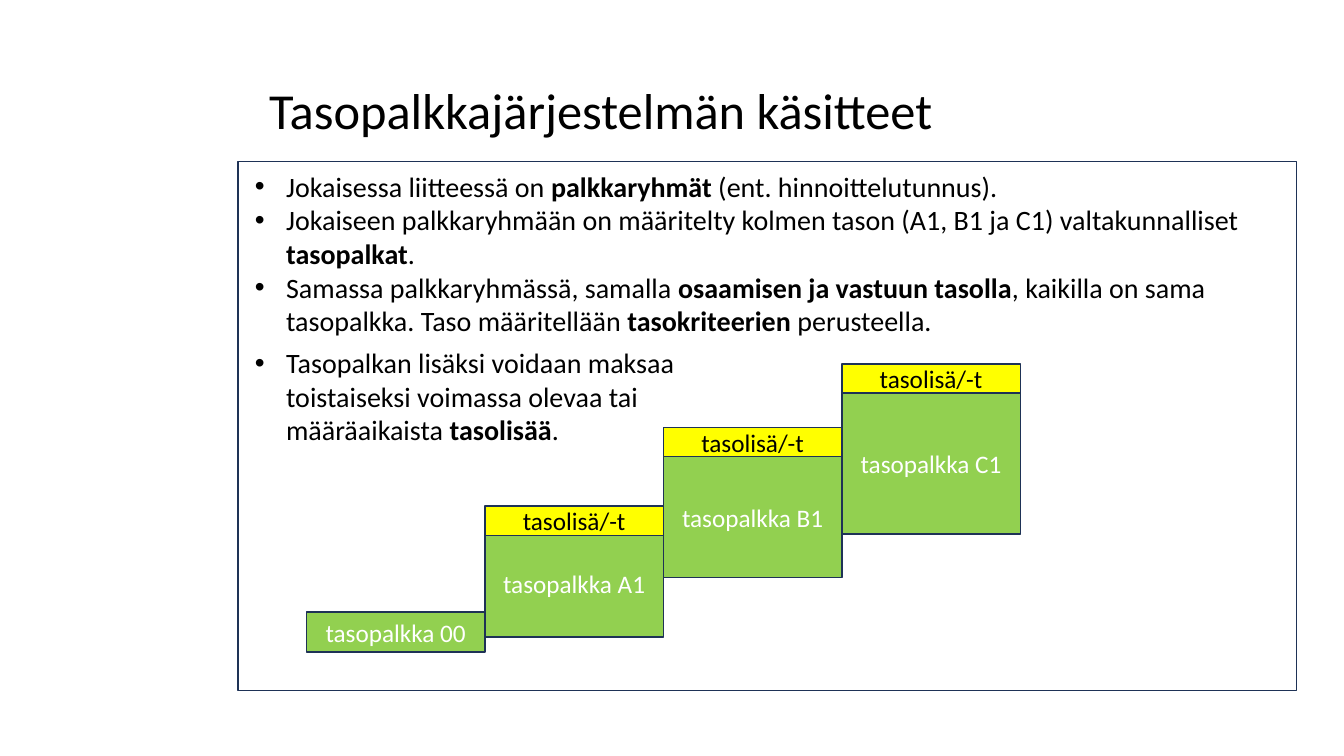
from lxml import etree
from pptx import Presentation
from pptx.dml.color import RGBColor
from pptx.enum.shapes import MSO_SHAPE
from pptx.enum.text import MSO_ANCHOR, PP_ALIGN
from pptx.oxml.ns import qn
from pptx.util import Inches, Pt

RECTANGLE = MSO_SHAPE.RECTANGLE
MIDDLE = MSO_ANCHOR.MIDDLE
CENTER = PP_ALIGN.CENTER

BLACK = RGBColor(0x00, 0x00, 0x00)
WHITE = RGBColor(0xFF, 0xFF, 0xFF)
GREEN = RGBColor(0x92, 0xD0, 0x50)
YELLOW = RGBColor(0xFF, 0xFF, 0x00)
NAVY = RGBColor(0x1E, 0x32, 0x56)
FONT = "Calibri"

deck = Presentation()
deck.slide_width = Inches(13.33)
deck.slide_height = Inches(7.5)
page = deck.slides.add_slide(deck.slide_layouts[6])


def add_block(left, top, width, height, fill=None, text="", color=WHITE):
    block = page.shapes.add_shape(
        RECTANGLE, Inches(left), Inches(top), Inches(width), Inches(height))
    block.shadow.inherit = False
    if fill is None:
        block.fill.background()
    else:
        block.fill.solid()
        block.fill.fore_color.rgb = fill
    block.line.color.rgb = NAVY
    block.line.width = Pt(1)
    if text:
        frame = block.text_frame
        frame.text = text
        frame.word_wrap = True
        frame.vertical_anchor = MIDDLE
        para = frame.paragraphs[0]
        para.alignment = CENTER
        font = para.runs[0].font
        font.name, font.size = FONT, Pt(18)
        font.color.rgb = color


def add_bullets(left, top, width, height, bullets):
    """Each bullet is a list of text pieces; every second piece is bold."""
    box = page.shapes.add_textbox(
        Inches(left), Inches(top), Inches(width), Inches(height))
    frame = box.text_frame
    frame.word_wrap = True
    for index, pieces in enumerate(bullets):
        para = frame.add_paragraph() if index else frame.paragraphs[0]
        properties = para._p.get_or_add_pPr()
        properties.set("marL", str(Inches(0.31)))
        properties.set("indent", str(Inches(-0.31)))
        etree.SubElement(properties, qn("a:buFont")).set("typeface", "Arial")
        etree.SubElement(properties, qn("a:buChar")).set("char", "•")
        for position, piece in enumerate(pieces):
            span = para.add_run()
            span.text = piece
            span.font.name, span.font.size = FONT, Pt(20)
            span.font.bold = position % 2 == 1
            span.font.color.rgb = BLACK
    return frame


# Title
title = page.shapes.add_textbox(
    Inches(2.57), Inches(0.4), Inches(10.29), Inches(1.45))
title.text_frame.text = "Tasopalkkajärjestelmän käsitteet"
title.text_frame.word_wrap = True
title.text_frame.vertical_anchor = MIDDLE
heading = title.text_frame.paragraphs[0]
heading.line_spacing = 0.9
heading_font = heading.runs[0].font
heading_font.name, heading_font.size = FONT, Pt(36)
heading_font.color.rgb = BLACK

# Frame around the content
add_block(2.36, 1.6, 10.5, 5.25)

# Staircase of pay levels: name, top, height, top of the supplement
STEP_LEFT, STEP_WIDTH, SUPPLEMENT_HEIGHT = 3.04, 1.77, 0.29
levels = [
    ("00", 6.07, 0.4, None),
    ("A1", 5.26, 1.06, 5.02),
    ("B1", 4.53, 1.2, 4.24),
    ("C1", 3.9, 1.4, 3.61),
]
for step, (level, top, height, supplement_top) in enumerate(levels):
    left = STEP_LEFT + step * STEP_WIDTH
    add_block(left, top, STEP_WIDTH, height, GREEN, f"tasopalkka {level}")
    if supplement_top is not None:
        add_block(left, supplement_top, STEP_WIDTH, SUPPLEMENT_HEIGHT,
                  YELLOW, "tasolisä/-t", BLACK)

# Bullets across the frame
add_bullets(2.43, 1.63, 10.43, 1.78, [
    ["Jokaisessa liitteessä on ", "palkkaryhmät",
     " (ent. hinnoittelutunnus)."],
    ["Jokaiseen palkkaryhmään on määritelty kolmen tason (A1, B1 ja C1) "
     "valtakunnalliset ", "tasopalkat", "."],
    ["Samassa palkkaryhmässä, samalla ", "osaamisen ja vastuun tasolla",
     ", kaikilla on sama tasopalkka. Taso määritellään ", "tasokriteerien",
     " perusteella."],
])

# Bullet beside the staircase
supplement_frame = add_bullets(2.43, 3.38, 5.5, 2.05, [
    ["Tasopalkan lisäksi voidaan maksaa toistaiseksi voimassa olevaa tai "
     "määräaikaista ", "tasolisää", "."],
])
supplement_frame.margin_right = Inches(0.25)

deck.save("out.pptx")
